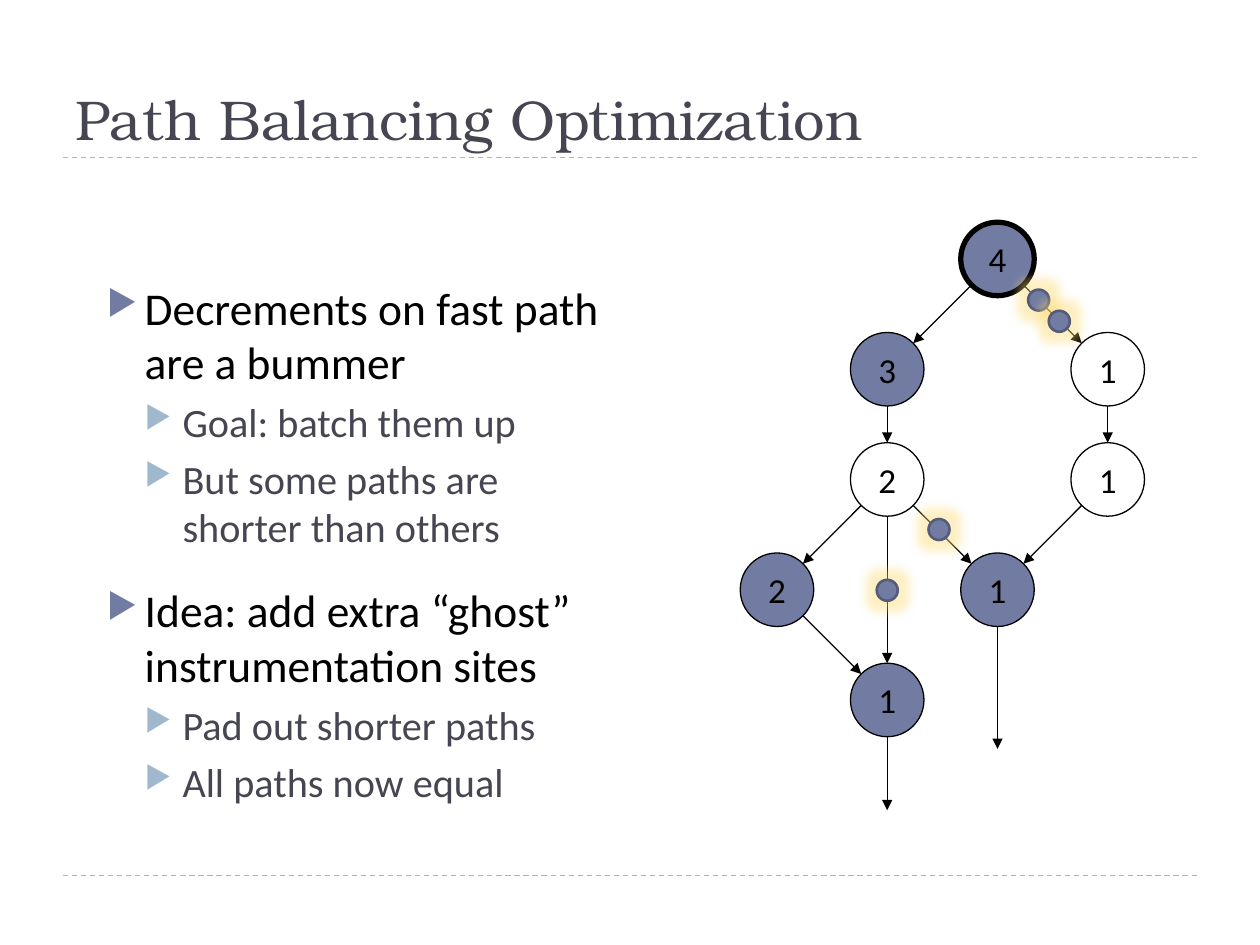
from math import hypot
from lxml import etree
from pptx import Presentation
from pptx.dml.color import RGBColor
from pptx.enum.dml import MSO_LINE
from pptx.enum.shapes import MSO_CONNECTOR, MSO_SHAPE
from pptx.enum.text import MSO_ANCHOR, PP_ALIGN
from pptx.oxml.ns import qn
from pptx.util import Pt

DASH = MSO_LINE.DASH
LINE = MSO_CONNECTOR.STRAIGHT
DISC = MSO_SHAPE.FLOWCHART_CONNECTOR
MIDDLE, BOTTOM = MSO_ANCHOR.MIDDLE, MSO_ANCHOR.BOTTOM
CENTER = PP_ALIGN.CENTER
BLUE, PALE, GREY, BLACK, WHITE = "727CA3", "9FB8CD", "464653", "000000", "FFFFFF"


def color(text):
    return RGBColor.from_string(text)


def rule(x1, y1, x2, y2, tint):
    line = slide.shapes.add_connector(LINE, Pt(x1), Pt(y1), Pt(x2), Pt(y2))
    line.line.color.rgb = color(tint)
    line.line.width = Pt(0.75)
    etree.SubElement(line._element.spPr, qn("a:effectLst"))
    return line


deck = Presentation()
deck.slide_width, deck.slide_height = Pt(720), Pt(540)
slide = deck.slides.add_slide(deck.slide_layouts[6])

for y in (500.4, 90):
    rule(36, y, 684, y, PALE).line.dash_style = DASH

title = slide.shapes.add_textbox(Pt(36), Pt(18), Pt(648), Pt(72)).text_frame
title.word_wrap = True
title.vertical_anchor = BOTTOM
run = title.paragraphs[0].add_run()
run.text = "Path Balancing Optimization"
run.font.name = "TeX Gyre Bonum"
run.font.size = Pt(32)
run.font.color.rgb = color(GREY)

points = [
    (0, "Decrements on fast path are a bummer"),
    (1, "Goal: batch them up"),
    (1, "But some paths are shorter than others"),
    (0, "Idea: add extra “ghost” instrumentation sites"),
    (1, "Pad out shorter paths"),
    (1, "All paths now equal"),
]
styles = [(26, BLACK, BLUE, 18), (23, GREY, PALE, 5)]
body = slide.shapes.add_textbox(Pt(54), Pt(156.24), Pt(300), Pt(324)).text_frame
body.word_wrap = True
for i, (level, text) in enumerate(points):
    size, ink, mark, gap = styles[level]
    para = body.add_paragraph() if i else body.paragraphs[0]
    para.level = level
    if i:
        para.space_before = Pt(gap)
    props = para._p.get_or_add_pPr()
    props.set("marL", str(Pt(21.6 * (level + 1))))
    props.set("indent", str(Pt(-21.6)))
    tint = etree.SubElement(props, qn("a:buClr"))
    etree.SubElement(tint, qn("a:srgbClr"), val=mark)
    etree.SubElement(props, qn("a:buSzPct"), val="76000")
    etree.SubElement(props, qn("a:buChar"), char="▶")
    run = para.add_run()
    run.text = text
    run.font.name = "Calibri"
    run.font.size = Pt(size)
    run.font.color.rgb = color(ink)

STEP, RADIUS = 63, 21
nodes = {
    "right": (3, 1, "1", WHITE),
    "fork": (1, 2, "2", WHITE),
    "lower": (3, 2, "1", WHITE),
    "join": (2, 3, "1", BLUE),
    "end": (1, 4, "1", BLUE),
    "left": (0, 3, "2", BLUE),
    "upper": (1, 1, "3", BLUE),
    "root": (2, 0, "4", BLUE),
}
spots = {}
for name, (col, row, text, fill) in nodes.items():
    x, y = spots[name] = 444 + col * STEP, 148 + row * STEP
    node = slide.shapes.add_shape(
        DISC, Pt(x - RADIUS), Pt(y - RADIUS), Pt(2 * RADIUS), Pt(2 * RADIUS))
    node.shadow.inherit = False
    node.fill.solid()
    node.fill.fore_color.rgb = color(fill)
    node.line.color.rgb = color(BLACK)
    node.line.width = Pt(3 if name == "root" else 0.75)
    frame = node.text_frame
    frame.word_wrap = False
    frame.vertical_anchor = MIDDLE
    para = frame.paragraphs[0]
    para.alignment = CENTER
    run = para.add_run()
    run.text = text
    run.font.name = "Calibri"
    run.font.size = Pt(20)
    run.font.color.rgb = color(BLACK)

links = [
    ("root", "right"), ("root", "upper"), ("upper", "fork"), ("fork", "left"),
    ("fork", "end"), ("fork", "join"), ("right", "lower"), ("left", "end"),
    ("lower", "join"),
]
paths = []
for start, stop in links:
    (x1, y1), (x2, y2) = spots[start], spots[stop]
    ratio = RADIUS / hypot(x2 - x1, y2 - y1)
    dx, dy = (x2 - x1) * ratio, (y2 - y1) * ratio
    paths.append((x1 + dx, y1 + dy, x2 - dx, y2 - dy))
for name, size in (("end", 42), ("join", 70)):
    x, y = spots[name]
    paths.append((x, y + RADIUS, x, y + RADIUS + size))
for path in paths:
    arrow = rule(*path, BLACK)
    etree.SubElement(arrow.line._get_or_add_ln(), qn("a:tailEnd"), type="triangle")

for x, y in ((536.6, 302.6), (593.5, 171.5), (605.3, 183.6), (507, 337.3)):
    ghost = slide.shapes.add_shape(DISC, Pt(x - 6), Pt(y - 6), Pt(12), Pt(12))
    ghost.shadow.inherit = False
    ghost.fill.solid()
    ghost.fill.fore_color.rgb = color(BLUE)
    ghost.line.color.rgb = color("545C79")
    ghost.line.width = Pt(1.5)
    effects = ghost._element.spPr.find(qn("a:effectLst"))
    glow = etree.SubElement(effects, qn("a:glow"), rad=str(Pt(11)))
    tint = etree.SubElement(glow, qn("a:srgbClr"), val="FFDA6B")
    etree.SubElement(tint, qn("a:alpha"), val="40000")

deck.save("out.pptx")
